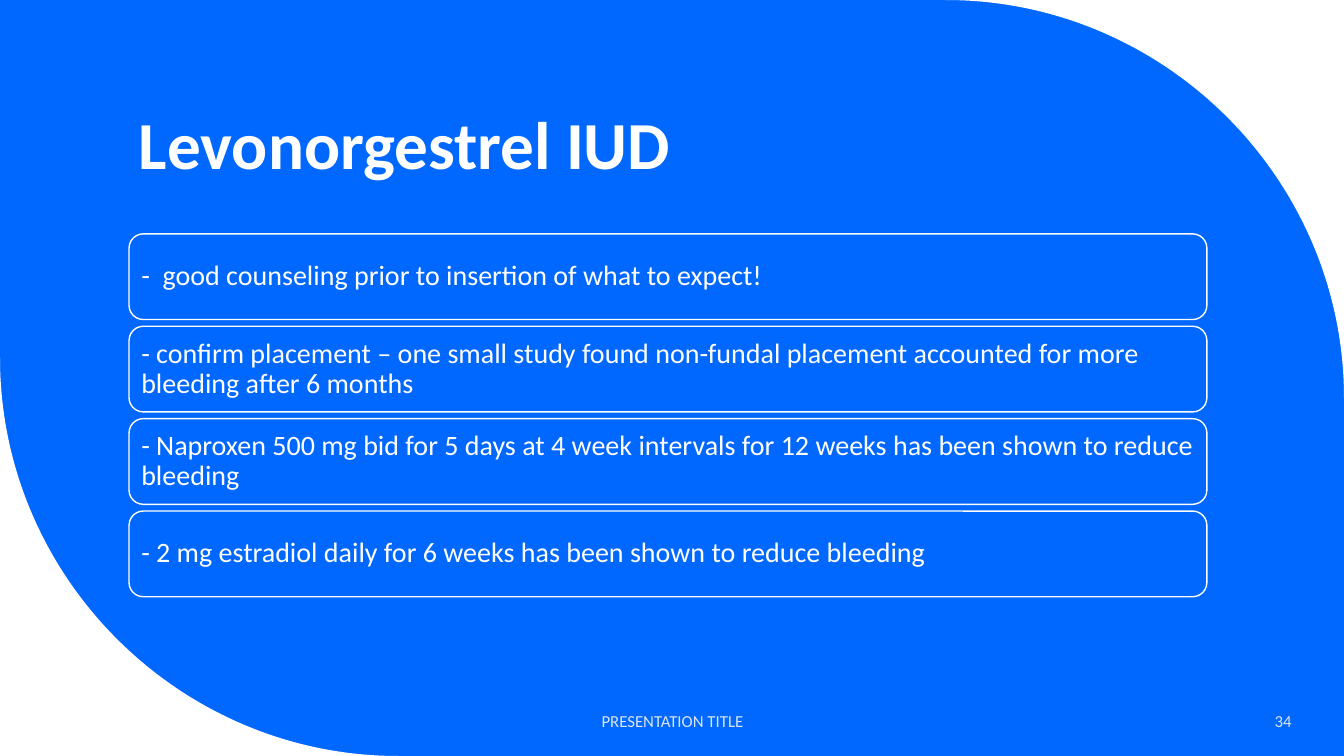
from dataclasses import dataclass

from lxml.etree import SubElement
from pptx import Presentation
from pptx.dml.color import RGBColor
from pptx.enum.shapes import MSO_SHAPE as Shape
from pptx.enum.text import MSO_ANCHOR as Anchor, PP_ALIGN as Align
from pptx.oxml.ns import qn
from pptx.util import Inches, Pt


@dataclass(frozen=True)
class Theme:
    """Colours, font and type sizes of the slide."""
    blue: RGBColor = RGBColor(0x00, 0x68, 0xFF)
    white: RGBColor = RGBColor(0xFF, 0xFF, 0xFF)
    pale: RGBColor = RGBColor(0xDA, 0xE5, 0xEF)
    font: str = "Calibri"
    title: Pt = Pt(48)
    body: Pt = Pt(20)
    small: Pt = Pt(12)


THEME = Theme()
WIDTH, HEIGHT = 13.33, 7.5
CORNER_RADIUS = 3.95
CURVE_PULL = 0.55
ROW_HEIGHT = 0.85
ADVICE = [
    "-  good counseling prior to insertion of what to expect!",
    "- confirm placement – one small study found non-fundal placement accounted for more bleeding after 6 months",
    "- Naproxen 500 mg bid for 5 days at 4 week intervals for 12 weeks has been shown to reduce bleeding",
    "- 2 mg estradiol daily for 6 weeks has been shown to reduce bleeding",
]


def apply(target, values):
    """Set each named attribute of the target."""
    for name, value in values.items():
        setattr(target, name, value)


def paint(shape, colour):
    """Give a shape a flat fill without shadow."""
    shape.shadow.inherit = False
    shape.fill.solid()
    shape.fill.fore_color.rgb = colour


def write(shape, text, font, colour=THEME.white, paragraph=None, frame=None):
    """Write one formatted paragraph into a shape."""
    text_frame = shape.text_frame
    apply(text_frame, {"word_wrap": True, "vertical_anchor": Anchor.MIDDLE, **(frame or {})})
    first = text_frame.paragraphs[0]
    apply(first, {"alignment": Align.LEFT, **(paragraph or {})})
    run = first.add_run()
    run.text = text
    apply(run.font, {"name": THEME.font, **font})
    run.font.color.rgb = colour


def add_text(slide, box, text, font, **formats):
    """Add a text box at the given box."""
    write(slide.shapes.add_textbox(*map(Inches, box)), text, font, **formats)


def bend_last_line(shape):
    """Turn the last line of a three-point outline into a curve pulled to its first point."""
    corner, start, end = [
        (int(point.get("x")), int(point.get("y"))) for point in shape._element.iter(qn("a:pt"))
    ]
    curve = list(shape._element.iter(qn("a:lnTo")))[-1]
    curve.tag = qn("a:cubicBezTo")
    for index, anchor in enumerate((start, end)):
        x, y = (round(a + CURVE_PULL * (c - a)) for a, c in zip(anchor, corner))
        curve.insert(index, SubElement(curve, qn("a:pt"), x=str(x), y=str(y)))


def add_corner(slide, x, y, toward_x, toward_y):
    """Cut a white concave corner whose arc centre lies inside the slide."""
    arc_ends = [(Inches(x), Inches(y + toward_y * CORNER_RADIUS)),
                (Inches(x + toward_x * CORNER_RADIUS), Inches(y))]
    builder = slide.shapes.build_freeform(Inches(x), Inches(y))
    builder.add_line_segments(arc_ends, close=True)
    corner = builder.convert_to_shape()
    bend_last_line(corner)
    paint(corner, THEME.white)
    corner.line.fill.background()


def add_background(slide):
    """Paint the blue background and its two white corners."""
    fill = slide.background.fill
    fill.solid()
    fill.fore_color.rgb = THEME.blue
    add_corner(slide, WIDTH, 0, -1, 1)
    add_corner(slide, 0, HEIGHT, 1, -1)


def add_title(slide, box):
    """Add the slide title resting on the bottom of its box."""
    add_text(slide, box, "Levonorgestrel IUD", {"size": THEME.title, "bold": True},
             paragraph={"line_spacing": 0.9}, frame={"vertical_anchor": Anchor.BOTTOM})


def add_advice(slide, left, top, width, height):
    """Spread one outlined rounded row per piece of advice over the box."""
    sides = ("left", "top", "right", "bottom")
    margins = {f"margin_{side}": Inches(0.08) for side in sides}
    pitch = (height - ROW_HEIGHT) / (len(ADVICE) - 1)
    for index, text in enumerate(ADVICE):
        box = (left, top + index * pitch, width, ROW_HEIGHT)
        row = slide.shapes.add_shape(Shape.ROUNDED_RECTANGLE, *map(Inches, box))
        paint(row, THEME.blue)
        row.line.color.rgb = THEME.white
        row.line.width = Pt(1)
        write(row, text, {"size": THEME.body}, paragraph={"line_spacing": 0.9}, frame=margins)


def add_footer(slide, top, height):
    """Add the centred footer and the slide number."""
    for left, width, text, alignment in (
        (4.42, 4.5, "PRESENTATION TITLE", Align.CENTER),
        (11.1, 1.81, "34", Align.RIGHT),
    ):
        add_text(slide, (left, top, width, height), text, {"size": THEME.small},
                 colour=THEME.pale, paragraph={"alignment": alignment})


def main():
    """Build and save the slide."""
    presentation = Presentation()
    apply(presentation, {"slide_width": Inches(WIDTH), "slide_height": Inches(HEIGHT)})
    slide = presentation.slides.add_slide(presentation.slide_layouts[6])
    add_background(slide)
    add_title(slide, (1.28, 0.42, 10.69, 1.45))
    add_advice(slide, 1.28, 2.32, 10.69, 3.6)
    add_footer(slide, 6.95, 0.4)
    presentation.save("out.pptx")


if __name__ == "__main__":
    main()
